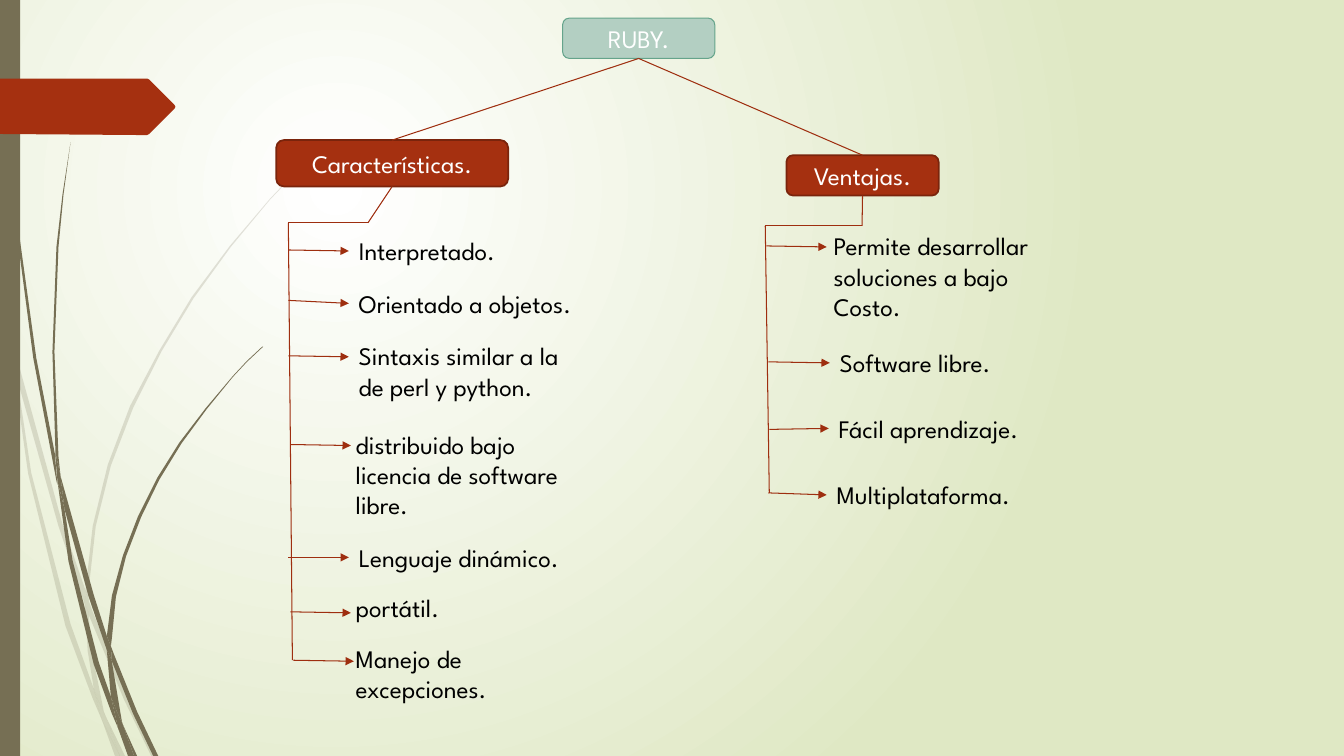
from dataclasses import dataclass

import pptx
import pptx.dml.color
import pptx.enum.shapes
import pptx.enum.text
import pptx.oxml
import pptx.oxml.ns
import pptx.util
from pptx.util import Inches

FONT = "League Spartan"
OLIVE = "766F54"
RUST = "A53010"
LINE = "9E2E0F"
WHITE = "FFFFFF"
ARROW_RUN, ARROW_DROP = 0.6, 0.01
JOIN_TOLERANCE = 0.035

Point = tuple[float, float]


@dataclass
class Heading:
    text: str
    left: float
    top: float
    width: float
    height: float
    fill: str
    outline: str
    outline_width: float


@dataclass
class Item:
    text: str
    left: float
    top: float
    width: float
    lines: int
    arrow_start: Point


@dataclass
class Branch:
    heading: Heading
    spine: list[Point]
    items: list[Item]


PALE_BLADES: list[list[Point]] = [
    [(0.11, 3.5), (0.09, 3.22), (0, 2.82), (0, 2.99), (0.1, 3.44)],
    [(0.58, 5.22), (0.84, 5.99), (0.85, 5.86), (0.62, 5.2), (0.14, 3.45), (0.17, 3.76)],
    [(0.92, 6.07), (0.88, 5.96), (0.88, 6.1), (1.23, 6.94), (1.5, 7.5), (1.55, 7.5), (1.27, 6.92)],
    [(1.19, 7.5), (1.24, 7.5), (1.05, 7.11)],
    [(0.93, 6.83), (0.7, 6.19), (0.31, 4.69), (0.17, 3.76), (0.11, 3.5), (0.28, 4.7),
     (0.65, 6.21), (0.92, 6.93), (1.01, 7.14), (0.99, 7.07)],
    [(0.84, 5.99), (0.87, 6.46), (0.93, 6.83), (0.96, 6.92), (1.05, 7.11), (1.03, 7.06),
     (0.91, 6.46), (0.88, 6.1), (0.88, 6.08)],
    [(0.88, 5.84), (0.95, 5.22), (1.1, 4.62), (1.32, 4.05), (1.6, 3.49), (1.92, 2.96),
     (2.29, 2.45), (2.68, 1.98), (2.9, 1.75), (3.12, 1.54), (3.12, 1.53), (2.89, 1.75),
     (2.68, 1.97), (2.28, 2.44), (1.9, 2.95), (1.58, 3.48), (1.29, 4.03), (1.07, 4.61),
     (0.92, 5.22), (0.85, 5.84), (0.85, 5.86), (0.88, 5.96)],
    [(1.01, 7.14), (1.14, 7.5), (1.19, 7.5)],
    [(0.88, 6.08), (0.88, 6.1), (0.88, 5.96), (0.85, 5.86), (0.84, 5.99)],
    [(0.96, 6.92), (0.93, 6.83), (0.99, 7.07), (1.01, 7.14), (1.19, 7.5), (1.05, 7.11)],
]

DARK_BLADES: list[list[Point]] = [
    [(0.07, 1.1), (0.17, 2.33), (0.33, 3.55), (0.56, 4.77), (0.57, 4.81), (0.55, 4.57),
     (0.55, 4.53), (0.36, 3.55), (0.19, 2.32), (0.08, 1.09), (0.05, 0.48), (0.04, 0),
     (0.03, 0), (0.04, 0.48)],
    [(0.88, 5.92), (1.06, 6.45), (1.06, 6.31), (0.93, 5.9), (0.6, 4.72), (0.64, 5.05)],
    [(1.13, 6.49), (1.1, 6.41), (1.11, 6.56), (1.32, 7.08), (1.52, 7.5), (1.57, 7.5), (1.36, 7.06)],
    [(1.1, 6.91), (0.98, 6.57), (0.72, 5.56), (0.64, 5.05), (0.57, 4.77), (0.68, 5.57),
     (0.93, 6.59), (1.11, 7.08), (1.17, 7.22), (1.16, 7.17)],
    [(0.6, 4.72), (0.58, 4.53), (0.54, 3.49), (0.58, 2.45), (0.63, 1.93), (0.7, 1.41),
     (0.62, 1.93), (0.56, 2.45), (0.52, 3.49), (0.55, 4.49)],
    [(1.33, 7.5), (1.36, 7.5), (1.22, 7.19)],
    [(0.57, 4.77), (0.64, 5.05), (0.6, 4.72), (0.55, 4.49), (0.55, 4.53)],
    [(1.11, 6.33), (1.15, 5.92), (1.25, 5.52), (1.4, 5.13), (1.58, 4.76), (1.8, 4.4),
     (2.05, 4.06), (2.31, 3.74), (2.45, 3.59), (2.61, 3.44), (2.6, 3.44), (2.45, 3.58),
     (2.31, 3.73), (2.04, 4.05), (1.78, 4.39), (1.56, 4.74), (1.37, 5.12), (1.22, 5.51),
     (1.11, 5.91), (1.06, 6.31), (1.1, 6.41)],
    [(1.17, 7.22), (1.27, 7.5), (1.31, 7.5)],
    [(1.06, 6.45), (1.1, 6.91), (1.16, 7.06), (1.22, 7.19), (1.21, 7.16), (1.11, 6.56), (1.09, 6.51)],
    [(1.06, 6.45), (1.09, 6.51), (1.11, 6.56), (1.1, 6.41), (1.06, 6.31)],
    [(1.16, 7.06), (1.1, 6.91), (1.16, 7.17), (1.17, 7.22), (1.3, 7.5), (1.33, 7.5), (1.22, 7.19)],
]

TAB: list[Point] = [(0, 0.78), (1.46, 0.78), (1.48, 0.79), (1.73, 1.04), (1.74, 1.06),
                    (1.73, 1.08), (1.48, 1.33), (1.46, 1.34), (1.36, 1.34), (0, 1.33)]

ROOT = Heading("RUBY.", 5.58, 0.18, 1.51, 0.4, "B3CFC2", "65A48B", 0.75)

BRANCHES = [
    Branch(
        Heading("Características.", 2.74, 1.39, 2.3, 0.46, RUST, "7A240C", 1.25),
        [(3.65, 2.21), (2.86, 2.21), (2.9, 6.55)],
        [
            Item("Interpretado.", 3.46, 2.29, 2.12, 1, (2.86, 2.48)),
            Item("Orientado a objetos.", 3.46, 2.81, 2.37, 1, (2.86, 2.98)),
            Item("Sintaxis similar a la de perl y python.", 3.46, 3.33, 2.37, 2, (2.86, 3.53)),
            Item("distribuido bajo licencia de software libre.", 3.43, 4.21, 2.52, 3, (2.88, 4.41)),
            Item("Lenguaje dinámico.", 3.46, 5.33, 2.49, 1, (2.86, 5.53)),
            Item("portátil.", 3.43, 5.83, 2.49, 1, (2.88, 6.07)),
            Item("Manejo de excepciones.", 3.43, 6.33, 2.49, 2, (2.91, 6.55)),
        ],
    ),
    Branch(
        Heading("Ventajas.", 7.8, 1.54, 1.51, 0.4, RUST, "7A240C", 1.25),
        [(8.55, 2.24), (7.59, 2.24), (7.63, 4.89)],
        [
            Item("Permite desarrollar soluciones a bajo Costo.", 8.17, 2.24, 2.59, 3, (7.6, 2.44)),
            Item("Software libre.", 8.23, 3.4, 1.83, 1, (7.62, 3.59)),
            Item("Fácil aprendizaje.", 8.22, 4.05, 2.39, 1, (7.63, 4.26)),
            Item("Multiplataforma.", 8.2, 4.71, 2.12, 1, (7.62, 4.89)),
        ],
    ),
]


def color(value: str) -> pptx.dml.color.RGBColor:
    return pptx.dml.color.RGBColor.from_string(value)


def element(tag: str, **attributes: str):
    node = pptx.oxml.parse_xml(f"<{tag} {pptx.oxml.ns.nsdecls('a')}/>")
    for name, value in attributes.items():
        node.set(name, value)
    return node


def paint_background(slide) -> None:
    fill = slide.background.fill
    fill.gradient()
    for stop, value in zip(fill.gradient_stops, (WHITE, "DFE8C4")):
        stop.color.rgb = color(value)
    gradient = slide.element.find(".//" + pptx.oxml.ns.qn("a:gradFill"))
    gradient.remove(gradient.find(pptx.oxml.ns.qn("a:lin")))
    circle = element("a:path", path="circle")
    circle.append(element("a:fillToRect", l="50000", t="50000", r="100000", b="100000"))
    gradient.append(circle)


def fill_plain(shape, value: str) -> None:
    shape.shadow.inherit = False
    shape.fill.solid()
    shape.fill.fore_color.rgb = color(value)
    shape.line.fill.background()


def draw_outline(slide, points: list[Point], value: str, opacity: int = 100) -> None:
    corners = [(Inches(x), Inches(y)) for x, y in points]
    builder = slide.shapes.build_freeform(*corners[0], scale=1.0)
    builder.add_line_segments(corners[1:], close=True)
    shape = builder.convert_to_shape()
    fill_plain(shape, value)
    if opacity < 100:
        solid = shape.element.spPr.find(pptx.oxml.ns.qn("a:solidFill"))
        solid[0].append(element("a:alpha", val=str(opacity * 1000)))


def write(shape, text: str, value: str) -> None:
    run = shape.text_frame.paragraphs[0].add_run()
    run.text = text
    run.font.name = FONT
    run.font.size = pptx.util.Pt(18)
    run.font.color.rgb = color(value)


def draw_heading(slide, heading: Heading):
    shape = slide.shapes.add_shape(
        pptx.enum.shapes.MSO_SHAPE.ROUNDED_RECTANGLE,
        Inches(heading.left), Inches(heading.top), Inches(heading.width), Inches(heading.height))
    fill_plain(shape, heading.fill)
    shape.line.color.rgb = color(heading.outline)
    shape.line.width = pptx.util.Pt(heading.outline_width)
    shape.text_frame.vertical_anchor = pptx.enum.text.MSO_ANCHOR.MIDDLE
    shape.text_frame.paragraphs[0].alignment = pptx.enum.text.PP_ALIGN.CENTER
    write(shape, heading.text, WHITE)
    return shape


def draw_line(slide, start: Point, end: Point, arrow: bool = False):
    connector = slide.shapes.add_connector(
        pptx.enum.shapes.MSO_CONNECTOR.STRAIGHT, *(Inches(value) for value in start + end))
    connector.line.color.rgb = color(LINE)
    connector.line.width = pptx.util.Pt(0.75)
    if arrow:
        connector.line._get_or_add_ln().append(element("a:tailEnd", type="triangle"))
    connector.element.spPr.append(element("a:effectLst"))
    return connector


def draw_item(slide, item: Item) -> None:
    height = 0.1 + 0.3 * item.lines
    box = slide.shapes.add_textbox(
        Inches(item.left), Inches(item.top), Inches(item.width), Inches(height))
    box.text_frame.word_wrap = True
    box.text_frame.auto_size = pptx.enum.text.MSO_AUTO_SIZE.SHAPE_TO_FIT_TEXT
    write(box, item.text, "000000")
    x, y = item.arrow_start
    tip = (x + ARROW_RUN, y + ARROW_DROP)
    arrow = draw_line(slide, item.arrow_start, tip, arrow=True)
    if max(abs(tip[0] - item.left), abs(tip[1] - item.top - height / 2)) < JOIN_TOLERANCE:
        arrow.end_connect(box, 1)


def draw_branch(slide, root, branch: Branch) -> None:
    heading = draw_heading(slide, branch.heading)
    link = draw_line(slide, (0, 0), (1, 1))
    link.begin_connect(root, 2)
    link.end_connect(heading, 0)
    draw_line(slide, (0, 0), branch.spine[0]).begin_connect(heading, 2)
    for start, end in zip(branch.spine, branch.spine[1:]):
        draw_line(slide, start, end)
    for item in branch.items:
        draw_item(slide, item)


def main() -> None:
    presentation = pptx.Presentation()
    presentation.slide_width, presentation.slide_height = Inches(13.33), Inches(7.5)
    slide = presentation.slides.add_slide(presentation.slide_layouts[6])
    paint_background(slide)
    for blades, opacity in ((PALE_BLADES, 20), (DARK_BLADES, 100)):
        for blade in blades:
            draw_outline(slide, blade, OLIVE, opacity)
    edge = slide.shapes.add_shape(
        pptx.enum.shapes.MSO_SHAPE.RECTANGLE, 0, 0, Inches(0.2), presentation.slide_height)
    fill_plain(edge, OLIVE)
    draw_outline(slide, TAB, RUST)
    root = draw_heading(slide, ROOT)
    for branch in BRANCHES:
        draw_branch(slide, root, branch)
    presentation.save("out.pptx")


if __name__ == "__main__":
    main()
